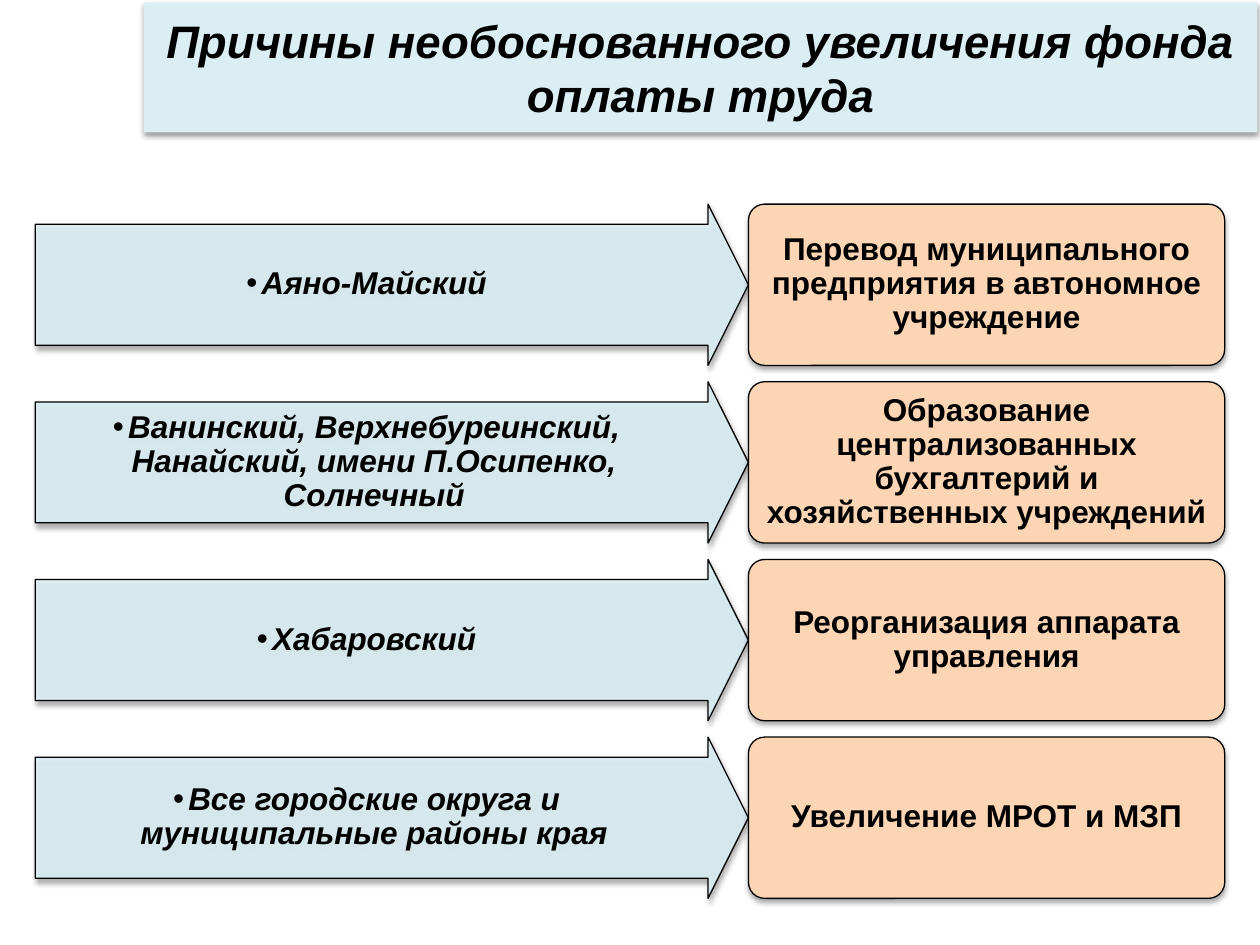
from lxml.etree import SubElement
from pptx import Presentation
from pptx.dml.color import RGBColor
from pptx.enum.shapes import MSO_SHAPE as Shape
from pptx.enum.text import MSO_ANCHOR as Anchor, PP_ALIGN as Align
from pptx.oxml import parse_xml
from pptx.oxml.ns import nsdecls, qn
from pptx.util import Inches, Pt

BLUE, PEACH, BLACK = "DBEEF4", "FCD5B5", "000000"
LEFT, MIDDLE, RIGHT = 0.28, 5.94, 9.72
TOP, ROW_STEP, ROW_HEIGHT = 1.62, 1.41, 1.28
ROWS = [
    ("Аяно-Майский",
     "Перевод муниципального предприятия в автономное учреждение"),
    ("Ванинский, Верхнебуреинский, Нанайский, имени П.Осипенко, Солнечный",
     "Образование централизованных бухгалтерий и хозяйственных учреждений"),
    ("Хабаровский", "Реорганизация аппарата управления"),
    ("Все городские округа и\nмуниципальные районы края",
     "Увеличение МРОТ и МЗП"),
]


def color(value):
    return RGBColor.from_string(value)


def set_fill(shape, value, opacity=100):
    shape.fill.solid()
    shape.fill.fore_color.rgb = color(value)
    if opacity < 100:
        tone = shape.fill._xPr.find(qn("a:solidFill"))[0]
        SubElement(tone, qn("a:alpha"), val=str(opacity * 1000))


def add_shadow(shape, distance, opacity):
    """Cast a soft black shadow straight down."""
    shape.shadow.inherit = False
    effects = shape._element.spPr.find(qn("a:effectLst"))
    outer = SubElement(effects, qn("a:outerShdw"), blurRad=str(Pt(3.1)),
                       dist=str(Pt(distance)), dir="5400000", rotWithShape="0")
    tone = SubElement(outer, qn("a:srgbClr"), val=BLACK)
    SubElement(tone, qn("a:alpha"), val=str(opacity * 1000))


def add_bullet(para):
    properties = para._p.get_or_add_pPr()
    properties.set("marL", str(Inches(0.12)))
    properties.set("indent", str(Inches(-0.12)))
    SubElement(properties, qn("a:buFont"), typeface="Arial")
    SubElement(properties, qn("a:buChar"), char="•")


def write(shape, text, size, insets, italic=False, spacing=1.0, bullet=False):
    """Fill a shape with one centred bold paragraph; insets go left, top, right, bottom."""
    frame = shape.text_frame
    frame.word_wrap = True
    frame.vertical_anchor = Anchor.MIDDLE
    (frame.margin_left, frame.margin_top,
     frame.margin_right, frame.margin_bottom) = map(Inches, insets)
    para = frame.paragraphs[0]
    para.text = text
    para.alignment = Align.CENTER
    para.line_spacing = spacing
    if bullet:
        para.level = 1
        add_bullet(para)
    for span in para.runs:
        span.font.name = "Arial"
        span.font.size = Pt(size)
        span.font.bold = True
        span.font.italic = italic
        span.font.color.rgb = color(BLACK)


def add_title(page, text):
    title = page.shapes.title
    title.left, title.top = Inches(1.14), Inches(0.02)
    title.width, title.height = Inches(8.84), Inches(1.03)
    title._element.spPr.append(parse_xml(
        f'<a:prstGeom {nsdecls("a")} prst="roundRect"><a:avLst/></a:prstGeom>'))
    set_fill(title, BLUE)
    add_shadow(title, 1.6, 38)
    write(title, text, 26, (0, 0, 0, 0), italic=True)


def add_block(page, kind, left, right, top, adjustments, fill, opacity=100):
    block = page.shapes.add_shape(kind, Inches(left), Inches(top),
                                  Inches(right - left), Inches(ROW_HEIGHT))
    for index, value in enumerate(adjustments):
        block.adjustments[index] = value
    set_fill(block, fill, opacity)
    block.line.color.rgb = color(BLACK)
    block.line.width = Pt(0.75)
    add_shadow(block, 1.8, 35)
    return block


def add_row(page, top, districts, reason):
    arrow = add_block(page, Shape.RIGHT_ARROW, LEFT, MIDDLE, top,
                      (0.75, 0.25), BLUE, opacity=90)
    write(arrow, districts, 18, (0.01, 0.05, 0.17, 0.05),
          italic=True, spacing=0.9, bullet=True)
    card = add_block(page, Shape.ROUNDED_RECTANGLE, MIDDLE, RIGHT, top,
                     (0.1,), PEACH)
    write(card, reason, 18, (0.05, 0.02, 0.05, 0.02), spacing=0.9)


def main():
    deck = Presentation()
    deck.slide_width, deck.slide_height = Inches(10), Inches(7.5)
    page = deck.slides.add_slide(deck.slide_layouts[5])
    add_title(page, "Причины необоснованного увеличения фонда оплаты труда")
    for index, (districts, reason) in enumerate(ROWS):
        add_row(page, TOP + index * ROW_STEP, districts, reason)
    deck.save("out.pptx")


if __name__ == "__main__":
    main()
